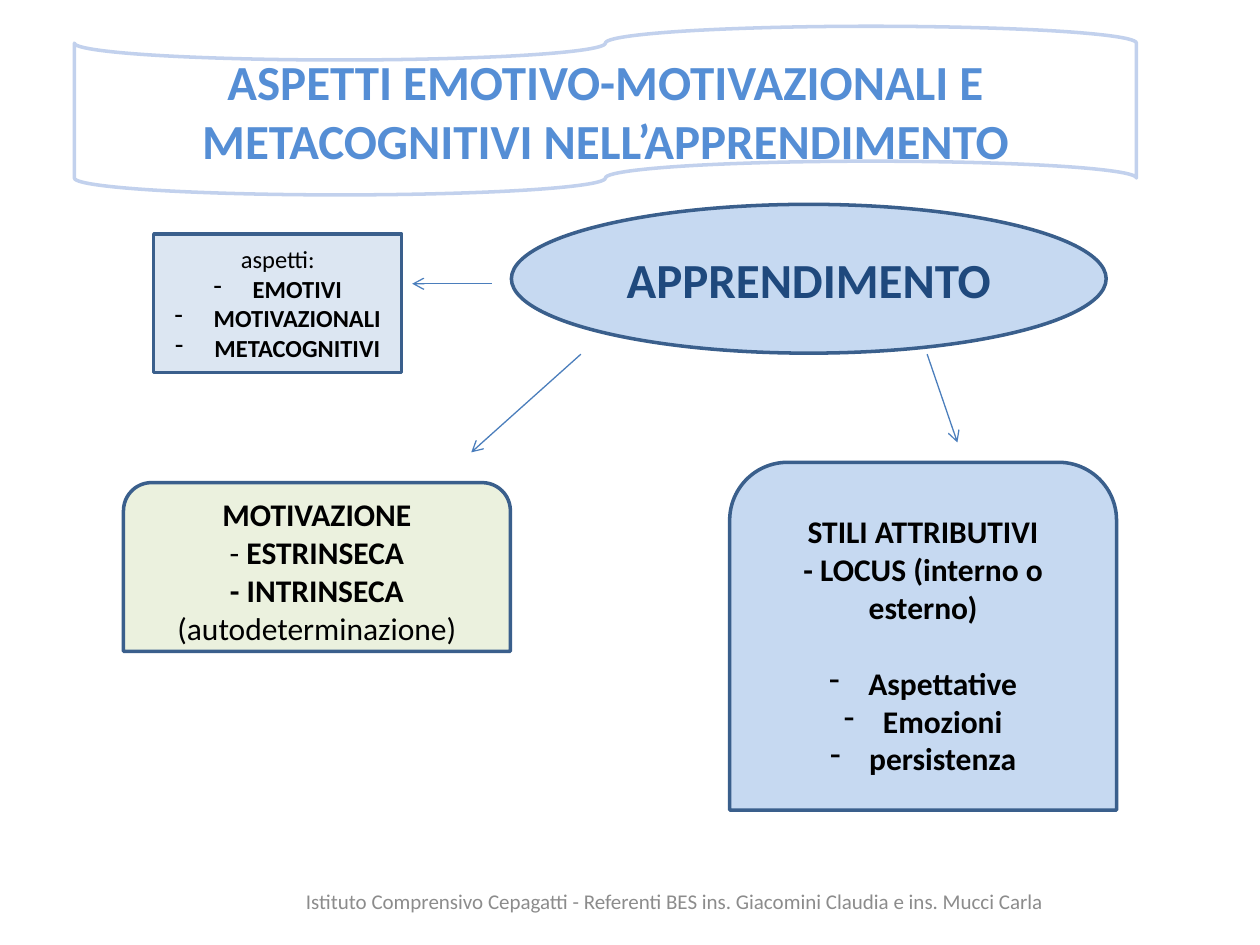
from lxml import etree
from pptx import Presentation
from pptx.dml.color import RGBColor
from pptx.enum.shapes import MSO_CONNECTOR, MSO_SHAPE
from pptx.enum.text import MSO_ANCHOR, MSO_AUTO_SIZE, PP_ALIGN
from pptx.oxml.ns import qn
from pptx.util import Cm, Pt

TAPE = MSO_SHAPE.FLOWCHART_PUNCHED_TAPE
OVAL = MSO_SHAPE.OVAL
RECTANGLE = MSO_SHAPE.RECTANGLE
ROUND_TOP = MSO_SHAPE.ROUND_2_SAME_RECTANGLE
STRAIGHT = MSO_CONNECTOR.STRAIGHT
MIDDLE = MSO_ANCHOR.MIDDLE
CENTER = PP_ALIGN.CENTER
NO_AUTOFIT = MSO_AUTO_SIZE.NONE

FONT = "Calibri"
TITLE_BLUE = RGBColor(0x55, 0x8E, 0xD5)
TAPE_BLUE = RGBColor(0xC2, 0xD1, 0xED)
NAVY = RGBColor(0x1F, 0x49, 0x7D)
OUTLINE = RGBColor(0x3A, 0x5F, 0x8C)
ARROW_BLUE = RGBColor(0x4B, 0x7E, 0xBC)
SKY = RGBColor(0xC6, 0xD9, 0xF1)
PALE_BLUE = RGBColor(0xDC, 0xE6, 0xF2)
PALE_GREEN = RGBColor(0xEB, 0xF1, 0xDE)
BLACK = RGBColor(0, 0, 0)
GRAY = RGBColor(0x8C, 0x8C, 0x8C)
BULLET_INDENT = Cm(0.79)


def add_bullet(para):
    properties = para._p.get_or_add_pPr()
    properties.set("marL", str(BULLET_INDENT))
    properties.set("indent", str(-BULLET_INDENT))
    etree.SubElement(properties, qn("a:buFontTx"))
    etree.SubElement(properties, qn("a:buChar")).set("char", "-")


def write_para(frame, *spans, size, color=BLACK, bold=False, bullet=False, before=0):
    """Write one centred paragraph; a span is a text or a (text, bold) pair."""
    first = len(frame.paragraphs) == 1 and not frame.paragraphs[0].runs
    para = frame.paragraphs[0] if first else frame.add_paragraph()
    para.alignment = CENTER
    if before:
        para.space_before = Pt(before)
    if bullet:
        add_bullet(para)
    for span in spans:
        text, span_bold = (span, bold) if isinstance(span, str) else span
        run = para.add_run()
        run.text = text
        run.font.name = FONT
        run.font.size = Pt(size)
        run.font.bold = span_bold
        run.font.color.rgb = color


def prepare_frame(shape):
    frame = shape.text_frame
    frame.word_wrap = True
    frame.auto_size = NO_AUTOFIT
    frame.vertical_anchor = MIDDLE
    return frame


def draw_shape(page, kind, box, line, fill=None):
    shape = page.shapes.add_shape(kind, *map(Cm, box))
    shape.shadow.inherit = False
    shape.line.color.rgb = line
    shape.line.width = Pt(2)
    if fill is None:
        shape.fill.background()
    else:
        shape.fill.solid()
        shape.fill.fore_color.rgb = fill
    return prepare_frame(shape)


def draw_banner(page, box):
    draw_shape(page, TAPE, box, TAPE_BLUE)
    title = page.shapes.title
    title.left, title.top, title.width, title.height = map(Cm, box)
    write_para(prepare_frame(title),
               "ASPETTI EMOTIVO-MOTIVAZIONALI E METACOGNITIVI NELL’APPRENDIMENTO",
               size=28, color=TITLE_BLUE, bold=True)


def draw_topic(page, box):
    frame = draw_shape(page, OVAL, box, OUTLINE, SKY)
    write_para(frame, "APPRENDIMENTO", size=28, color=NAVY, bold=True)


def draw_aspects(page, box):
    frame = draw_shape(page, RECTANGLE, box, OUTLINE, PALE_BLUE)
    write_para(frame, "aspetti:", size=14)
    for aspect in ("EMOTIVI", "MOTIVAZIONALI", "METACOGNITIVI"):
        write_para(frame, aspect, size=14, bold=True, bullet=True)


def draw_motivation(page, box):
    frame = draw_shape(page, ROUND_TOP, box, OUTLINE, PALE_GREEN)
    write_para(frame, "MOTIVAZIONE", size=18, bold=True)
    write_para(frame, "- ", ("ESTRINSECA", True), size=18)
    write_para(frame, ("- INTRINSECA ", True), "(autodeterminazione)", size=18)


def draw_styles(page, box):
    frame = draw_shape(page, ROUND_TOP, box, OUTLINE, SKY)
    for heading in ("STILI ATTRIBUTIVI", "- LOCUS (interno o esterno)"):
        write_para(frame, heading, size=18, bold=True)
    for index, effect in enumerate(("Aspettative", "Emozioni", "persistenza")):
        write_para(frame, effect, size=18, bold=True, bullet=True,
                   before=22 if index == 0 else 0)


def draw_arrow(page, start, end):
    arrow = page.shapes.add_connector(STRAIGHT, *map(Cm, start + end))
    arrow.line.color.rgb = ARROW_BLUE
    arrow.line.width = Pt(0.75)
    etree.SubElement(arrow.line._get_or_add_ln(), qn("a:tailEnd")).set("type", "arrow")
    etree.SubElement(arrow._element.spPr, qn("a:effectLst"))


def draw_footer(page, box):
    frame = prepare_frame(page.shapes.add_textbox(*map(Cm, box)))
    write_para(frame, "Istituto Comprensivo Cepagatti - Referenti BES "
               "ins. Giacomini Claudia e ins. Mucci Carla", size=12, color=GRAY)


def main():
    deck = Presentation()
    deck.slide_width, deck.slide_height = Cm(25.4), Cm(19.05)
    page = deck.slides.add_slide(deck.slide_layouts[5])

    # Title and central topic
    draw_banner(page, (1.5, 0.53, 21.41, 3.4))
    draw_topic(page, (10.31, 4.12, 11.99, 3))

    # Branches of the topic
    draw_aspects(page, (3.1, 4.72, 5, 2.79))
    draw_motivation(page, (2.49, 9.73, 7.8, 3.4))
    draw_styles(page, (14.71, 9.32, 7.8, 7.01))

    # Arrows from the topic to its branches
    draw_arrow(page, (9.91, 5.72), (8.31, 5.72))
    draw_arrow(page, (11.71, 7.14), (9.5, 9.12))
    draw_arrow(page, (18.69, 7.14), (19.3, 8.92))

    draw_footer(page, (3.1, 17.65, 21.01, 1.02))
    deck.save("out.pptx")


if __name__ == "__main__":
    main()
